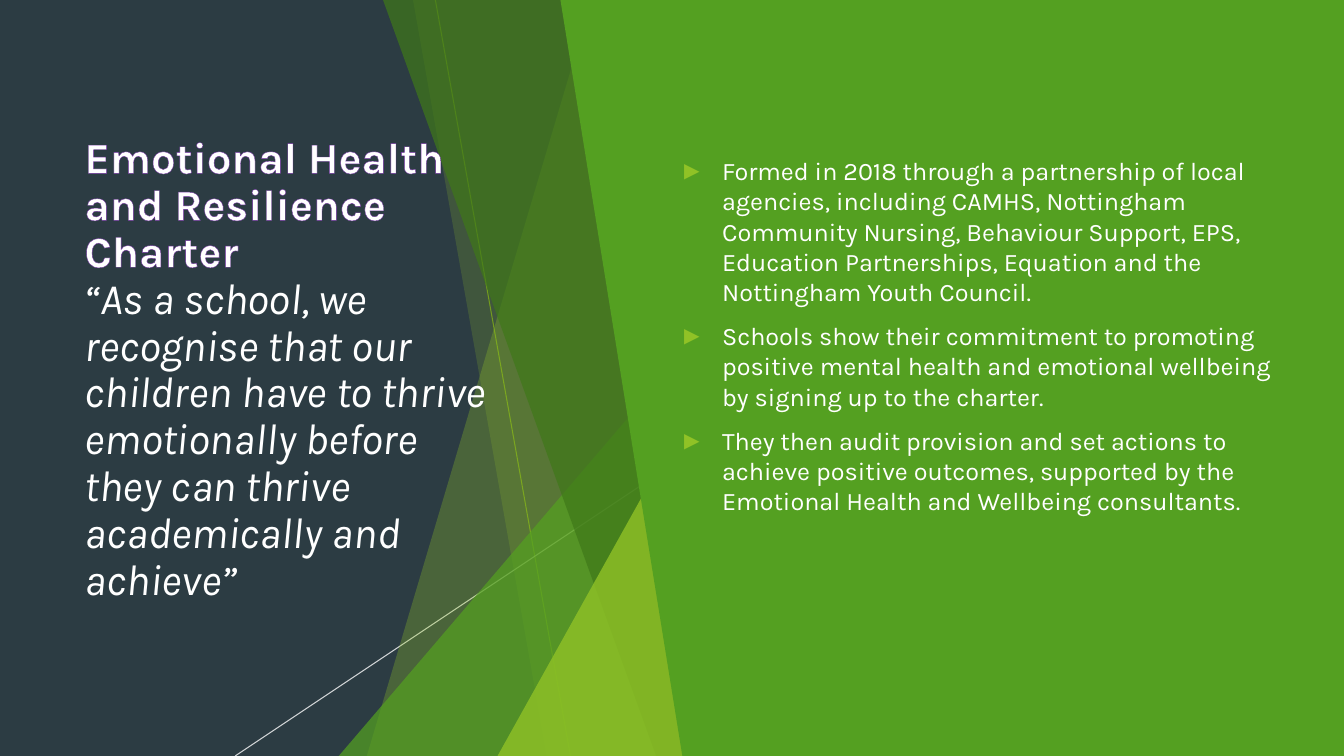
from lxml import etree
from pptx import Presentation, util as u
from pptx.dml.color import RGBColor
from pptx.enum import shapes, text
from pptx.oxml import ns

SLATE = RGBColor(0x2C, 0x3C, 0x43)
GREEN = RGBColor(0x54, 0xA0, 0x21)
LIME = RGBColor(0x90, 0xC2, 0x26)
FOREST = RGBColor(0x3F, 0x78, 0x19)
OLIVE = RGBColor(0x6C, 0x92, 0x1D)
PURPLE = RGBColor(0x70, 0x30, 0xA0)
WHITE = RGBColor(0xFF, 0xFF, 0xFF)

WIDTH, HEIGHT = 960, 540
EDGE = 498.6  # right side of the overlapping facets

CHARTER = "Emotional Health and Resilience Charter"
QUOTE = ("“As a school, we recognise that our children have to thrive "
         "emotionally before they can thrive academically and achieve”")
POINTS = [
    "Formed in 2018 through a partnership of local agencies, including CAMHS, "
    "Nottingham Community Nursing, Behaviour Support, EPS, Education "
    "Partnerships, Equation and the Nottingham Youth Council.",
    "Schools show their commitment to promoting positive mental health and "
    "emotional wellbeing by signing up to the charter.",
    "They then audit provision and set actions to achieve positive outcomes, "
    "supported by the Emotional Health and Wellbeing consultants.",
]


def add(parent, tag, **attrs):
    return etree.SubElement(parent, ns.qn(tag), attrs)


class Deck:
    font = "Karla"

    def __init__(self):
        self.prs = Presentation()
        self.prs.slide_width = u.Pt(WIDTH)
        self.prs.slide_height = u.Pt(HEIGHT)
        self.slide = self.prs.slides.add_slide(self.prs.slide_layouts[6])
        self.items = self.slide.shapes

    def back(self, color):
        fill = self.slide.background.fill
        fill.solid()
        fill.fore_color.rgb = color

    def fade(self, fill, alpha):
        """Set the opacity, in percent, of a solid fill in the given element."""
        color = next(fill.iter(ns.qn("a:srgbClr")))
        add(color, "a:alpha", val=str(alpha * 1000))

    def paint(self, shape, color, alpha):
        shape.shadow.inherit = False
        shape.line.fill.background()
        shape.fill.solid()
        shape.fill.fore_color.rgb = color
        if alpha < 100:
            self.fade(shape._element.spPr, alpha)

    def line(self, start, end, color, alpha=100):
        ends = [u.Pt(n) for n in (*start, *end)]
        line = self.items.add_connector(shapes.MSO_CONNECTOR.STRAIGHT, *ends)
        line.line.color.rgb = color
        line.line.width = u.Pt(0.75)
        if alpha < 100:
            self.fade(line._element.spPr, alpha)
        add(line._element.spPr, "a:effectLst")

    def facet(self, top, foot, right, color, alpha=100):
        """Draw a full-height panel with a slanting left side."""
        spots = [(right, 0), (right, HEIGHT), (foot, HEIGHT)]
        form = self.items.build_freeform(u.Pt(top), 0)
        form.add_line_segments([(u.Pt(x), u.Pt(y)) for x, y in spots])
        self.paint(form.convert_to_shape(), color, alpha)

    def wedge(self, left, top, color, alpha):
        """Draw a triangle from the foot of the slide, its tip at the edge."""
        box = [u.Pt(n) for n in (left, top, EDGE - left, HEIGHT - top)]
        shape = self.items.add_shape(shapes.MSO_SHAPE.ISOSCELES_TRIANGLE, *box)
        shape.adjustments[0] = 1
        self.paint(shape, color, alpha)

    def text(self, box, lines, anchor):
        frame = self.items.add_textbox(*[u.Pt(n) for n in box]).text_frame
        frame.word_wrap = True
        frame.vertical_anchor = anchor
        frame.text = "\n".join(lines)
        return frame.paragraphs

    def style(self, para, size):
        font = para.runs[0].font
        font.name = self.font
        font.size = u.Pt(size)
        font.color.rgb = WHITE
        return font

    def title(self, box, head, quote):
        paras = self.text(box, [head, quote], text.MSO_ANCHOR.MIDDLE)
        for para in paras:
            para.line_spacing = 0.9
        self.style(paras[0], 31).bold = True
        self.style(paras[1], 31).italic = True
        props = paras[0].runs[0]._r.get_or_add_rPr()
        rim = add(props, "a:ln", w="0")
        add(add(rim, "a:solidFill"), "a:srgbClr", val=str(PURPLE))
        props.insert(0, rim)

    def bullets(self, box, lines):
        paras = self.text(box, lines, text.MSO_ANCHOR.TOP)
        for i, para in enumerate(paras):
            if i:
                para.space_before = u.Pt(10)
            props = para._p.get_or_add_pPr()
            props.set("marL", str(u.Pt(27)))
            props.set("indent", str(u.Pt(-27)))
            add(add(props, "a:buClr"), "a:srgbClr", val=str(LIME))
            add(props, "a:buSzPct", val="80000")
            add(props, "a:buFont", typeface="DejaVu Sans")
            add(props, "a:buChar", char="▶")
            self.style(para, 18)


def main():
    deck = Deck()
    deck.back(SLATE)
    deck.line((311, 0), (407.5, HEIGHT), OLIVE)
    deck.line((543, 290), (168, HEIGHT), WHITE, 80)
    deck.facet(422.6, 262, EDGE, LIME, 30)
    deck.facet(295, 390.5, EDGE, LIME, 20)
    deck.wedge(242, 240, GREEN, 72)
    deck.facet(273.6, 468.7, EDGE, FOREST, 70)
    deck.wedge(355.4, 283, LIME, 80)
    deck.facet(400.3, 487.4, WIDTH, GREEN)
    deck.title((53.3, 46.4, 302.4, 436.4), CHARTER, QUOTE)
    deck.bullets((481.7, 107.4, 434.2, 270), POINTS)
    deck.prs.save("out.pptx")


if __name__ == "__main__":
    main()
